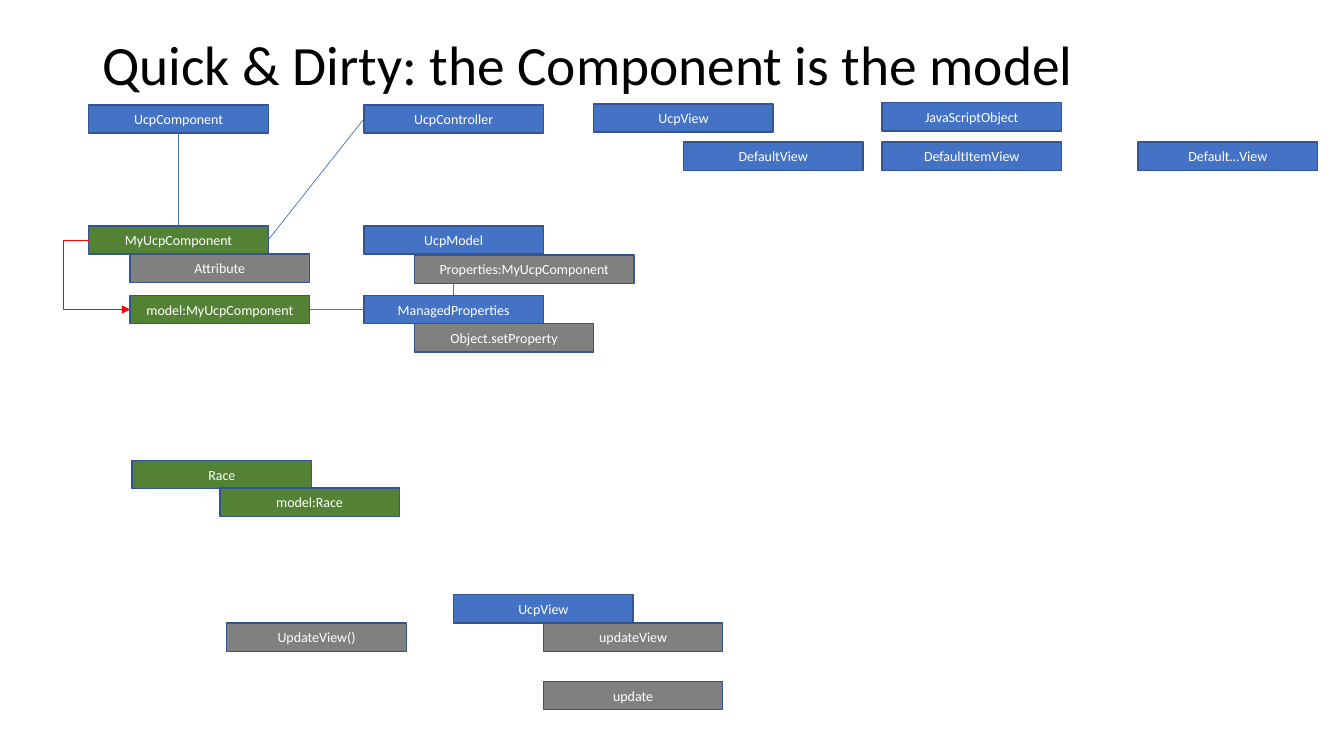
from dataclasses import dataclass
from typing import Optional

from lxml.etree import SubElement
from pptx import Presentation
from pptx.dml.color import RGBColor
from pptx.enum.shapes import MSO_CONNECTOR, MSO_SHAPE
from pptx.enum.text import MSO_ANCHOR, PP_ALIGN
from pptx.oxml.ns import qn
from pptx.shapes.autoshape import Shape
from pptx.shapes.connector import Connector
from pptx.shapes.shapetree import SlideShapes
from pptx.util import Pt


@dataclass(frozen=True)
class Theme:
    font: str = "Calibri"
    title_size: float = 39.6
    label_size: float = 10
    framework: str = "4472C4"
    custom: str = "548235"
    member: str = "808080"
    outline: str = "325491"
    link: str = "4472C4"
    self_reference: str = "FF0000"
    label: str = "FFFFFF"
    title: str = "000000"


THEME = Theme()
BOX_WIDTH, BOX_HEIGHT = 128.2, 20.2
TOP, BOTTOM_ROW, LEFT, BOTTOM, RIGHT = 0, 445, 1, 2, 3


@dataclass(frozen=True)
class Box:
    label: str
    left: float
    top: float
    fill: str = THEME.framework
    width: float = BOX_WIDTH


@dataclass(frozen=True)
class Link:
    source: Box
    source_side: int
    target: Box
    target_side: int
    color: str = THEME.link
    bend: Optional[int] = None  # elbow position, in 1/100000 of the span
    arrow: bool = False


# Classes that take part in links
ucp_component = Box("UcpComponent", 63.4, 74.9)
my_component = Box("MyUcpComponent", 63.4, 161.3, THEME.custom)
ucp_model = Box("UcpModel", 259.9, 161.3)
ucp_controller = Box("UcpController", 259.9, 74.9)
managed_properties = Box("ManagedProperties", 259.9, 211)
component_model = Box("model:MyUcpComponent", 92.9, 211, THEME.custom)

BOXES = [
    ucp_component, my_component, ucp_model, ucp_controller,
    # Views
    Box("UcpView", 424.1, 74.2),
    Box("DefaultView", 488.2, 101.5),
    Box("DefaultItemView", 630, 101.5),
    Box("Default…View", 812.9, 101.5),
    Box("JavaScriptObject", 630, 73.4),
    # Properties and attributes
    managed_properties,
    Box("Object.setProperty", 295.9, 231.2, THEME.member),
    Box("Attribute", 92.9, 181.4, THEME.member),
    component_model,
    # Race example
    Box("Race", 94.3, 328.8, THEME.custom),
    Box("model:Race", 157, 348.7, THEME.custom),
    # View update
    Box("UpdateView()", 162, BOTTOM_ROW, THEME.member),
    Box("updateView", 388.1, BOTTOM_ROW, THEME.member),
    Box("UcpView", 324, 424.8),
    Box("update", 388.1, 486.7, THEME.member),
]

LINKS = [
    Link(my_component, RIGHT, ucp_controller, LEFT),
    Link(ucp_component, BOTTOM, my_component, TOP),
    Link(managed_properties, TOP, ucp_model, BOTTOM),
    Link(managed_properties, LEFT, component_model, RIGHT),
    Link(my_component, LEFT, component_model, LEFT,
         THEME.self_reference, bend=-60600, arrow=True),
]

# Lies over the link between UcpModel and ManagedProperties
MODEL_PROPERTIES = Box("Properties:MyUcpComponent", 295.9, 182.2, THEME.member, 157)


def write(shape: Shape, text: str, *, size: float, color: str,
          align: PP_ALIGN = PP_ALIGN.LEFT, spacing: float = 1.0) -> None:
    frame = shape.text_frame
    frame.word_wrap = True
    frame.vertical_anchor = MSO_ANCHOR.MIDDLE
    paragraph = frame.paragraphs[0]
    paragraph.alignment = align
    paragraph.line_spacing = spacing
    run = paragraph.add_run()
    run.text = text
    run.font.name = THEME.font
    run.font.size = Pt(size)
    run.font.color.rgb = RGBColor.from_string(color)


def draw_box(shapes: SlideShapes, box: Box) -> Shape:
    rectangle = shapes.add_shape(MSO_SHAPE.RECTANGLE, Pt(box.left), Pt(box.top),
                                 Pt(box.width), Pt(BOX_HEIGHT))
    rectangle.shadow.inherit = False
    rectangle.fill.solid()
    rectangle.fill.fore_color.rgb = RGBColor.from_string(box.fill)
    rectangle.line.color.rgb = RGBColor.from_string(THEME.outline)
    rectangle.line.width = Pt(1)
    write(rectangle, box.label, size=THEME.label_size, color=THEME.label,
          align=PP_ALIGN.CENTER)
    return rectangle


def draw_link(shapes: SlideShapes, link: Link, drawn: dict[Box, Shape]) -> Connector:
    kind = MSO_CONNECTOR.STRAIGHT if link.bend is None else MSO_CONNECTOR.ELBOW
    connector = shapes.add_connector(kind, 0, 0, 0, 0)
    connector.begin_connect(drawn[link.source], link.source_side)
    connector.end_connect(drawn[link.target], link.target_side)
    connector.line.color.rgb = RGBColor.from_string(link.color)
    connector.line.width = Pt(0.5)
    properties = connector._element.spPr
    if link.bend is not None:
        adjustments = properties.find(qn("a:prstGeom")).get_or_add_avLst()
        SubElement(adjustments, qn("a:gd"), name="adj1", fmla=f"val {link.bend}")
    if link.arrow:
        SubElement(properties.find(qn("a:ln")), qn("a:tailEnd"), type="triangle")
    SubElement(properties, qn("a:effectLst"))
    return connector


def main() -> None:
    presentation = Presentation()
    presentation.slide_width, presentation.slide_height = Pt(960), Pt(540)
    shapes = presentation.slides.add_slide(presentation.slide_layouts[6]).shapes

    # Class diagram
    drawn = {box: draw_box(shapes, box) for box in BOXES}
    for link in LINKS:
        draw_link(shapes, link, drawn)
    draw_box(shapes, MODEL_PROPERTIES)

    # Title
    heading = shapes.add_textbox(Pt(66), Pt(28.8), Pt(828), Pt(38.2))
    write(heading, "Quick & Dirty: the Component is the model",
          size=THEME.title_size, color=THEME.title, spacing=0.9)

    presentation.save("out.pptx")


if __name__ == "__main__":
    main()
